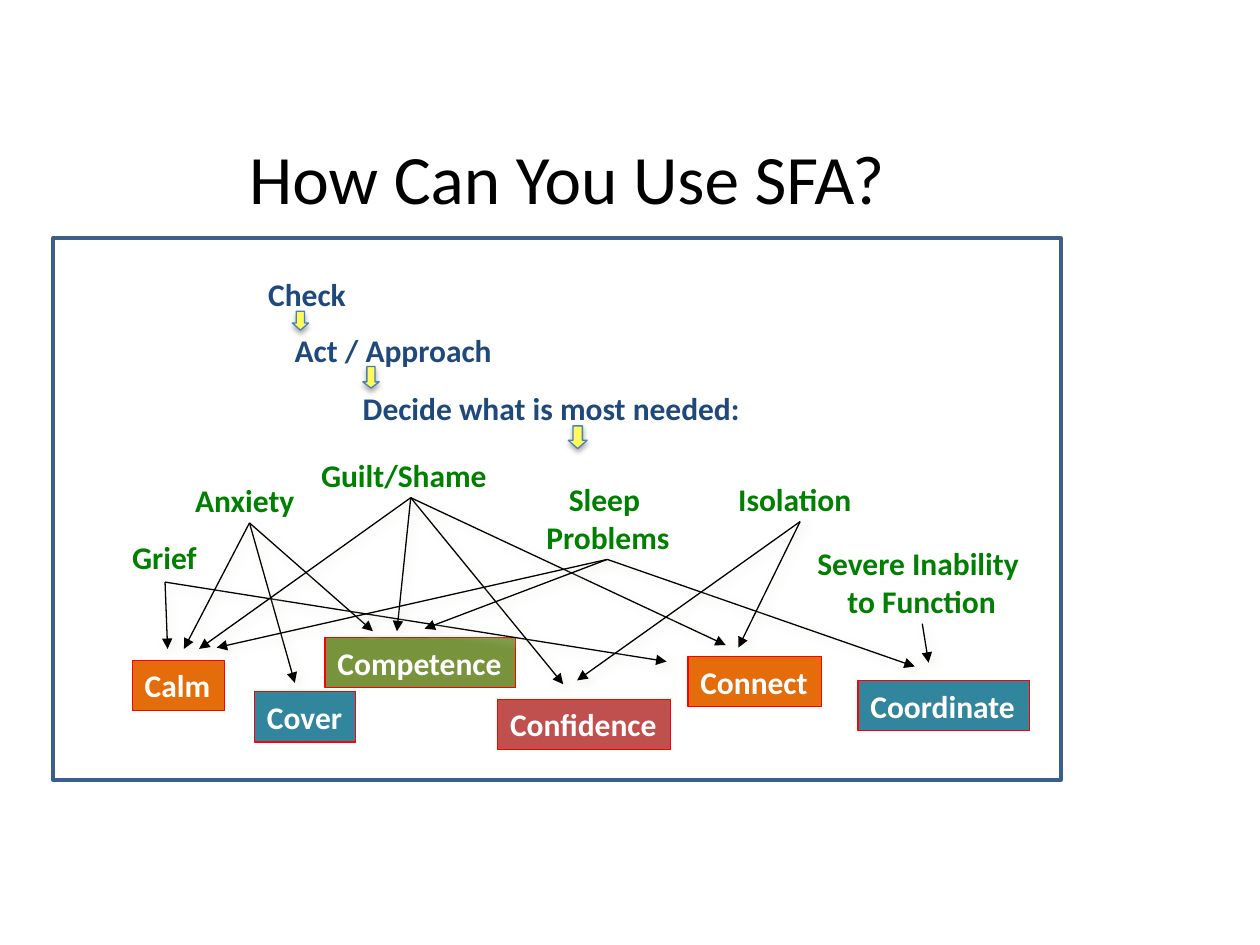
from lxml import etree
from pptx import Presentation
from pptx.dml.color import RGBColor
from pptx.enum.shapes import MSO_CONNECTOR, MSO_SHAPE
from pptx.enum.text import MSO_ANCHOR, MSO_AUTO_SIZE, PP_ALIGN
from pptx.oxml.ns import qn
from pptx.util import Inches, Pt

RECT = MSO_SHAPE.RECTANGLE
DOWN_ARROW = MSO_SHAPE.DOWN_ARROW
STRAIGHT = MSO_CONNECTOR.STRAIGHT
LEFT, CENTER = PP_ALIGN.LEFT, PP_ALIGN.CENTER
TOP = MSO_ANCHOR.TOP
GROW = MSO_AUTO_SIZE.SHAPE_TO_FIT_TEXT

COLORS = {
    "black": "000000", "white": "FFFFFF", "frame": "3A5F8C", "step": "1F497D",
    "problem": "008000", "border": "FF0000", "orange": "E46C0A", "olive": "77933C",
    "teal": "31859C", "red": "C0504D", "yellow": "FDFA59", "arrow_edge": "4B7EBC",
    "glow": "EEECE1",
}
LINE_HEIGHT = 0.4
ARROW_SHADOW = {"color": "black", "alpha": 35, "blur": 3.1, "dist": 1.8, "angle": 90}
LINK_SHADOW = {"color": "glow", "alpha": 75, "blur": 5, "dist": 3, "angle": 45}

STEPS = [
    ("Check", 2.03, 2.13, 0.82),
    ("Act / Approach", 2.24, 2.58, 1.78),
    ("Decide what is most needed:", 2.78, 3.04, 3.61),
]
STEP_ARROWS = [
    (2.32, 2.47, 0.13, 0.15, 0.438),
    (2.88, 2.91, 0.13, 0.17, 0.375),
    (4.51, 3.38, 0.15, 0.18, 0.438),
]
PROBLEMS = [
    (["Grief"], 0.95, 4.22, 0.72, (1.31, 4.62), [(1.33, 5.15), (5.29, 5.25)]),
    (["Anxiety"], 1.45, 3.77, 1, (1.98, 4.15),
     [(1.46, 5.15), (2.34, 5.42), (2.96, 5.01)]),
    (["Guilt/Shame"], 2.45, 3.57, 1.53, (3.26, 3.95),
     [(1.58, 5.15), (3.15, 5.01), (4.47, 5.43), (5.76, 5.12)]),
    (["Sleep ", "Problems"], 4.23, 3.76, 1.19, (4.82, 4.44),
     [(1.72, 5.14), (3.37, 4.99), (7.26, 5.29)]),
    (["Isolation"], 5.76, 3.76, 1.11, (6.35, 4.14), [(4.58, 5.4), (5.86, 5.14)]),
    (["Severe Inability ", "to Function"], 6.38, 4.27, 1.87, (7.32, 4.95),
     [(7.37, 5.26)]),
]
ACTIONS = [
    ("Calm", 1.05, 5.24, 0.73, "orange"),
    ("Cover", 2.02, 5.49, 0.8, "teal"),
    ("Competence", 2.58, 5.06, 1.51, "olive"),
    ("Confidence", 3.95, 5.55, 1.37, "red"),
    ("Connect", 5.46, 5.21, 1.06, "orange"),
    ("Coordinate", 6.81, 5.4, 1.36, "teal"),
]


def rgb(name):
    return RGBColor.from_string(COLORS[name])


def box(x, y, w, h):
    return [Inches(v) for v in (x, y, w, h)]


def format_font(font, color, **values):
    for key, value in {"name": "Calibri", **values}.items():
        setattr(font, key, value)
    font.color.rgb = rgb(color)


def write_lines(sp, lines, color):
    tf = sp.text_frame
    for key, value in {"word_wrap": False, "auto_size": GROW,
                       "vertical_anchor": TOP}.items():
        setattr(tf, key, value)
    for i, line in enumerate(lines):
        p = tf.add_paragraph() if i else tf.paragraphs[0]
        p.alignment = CENTER if len(lines) > 1 else LEFT
        r = p.add_run()
        r.text = line
        format_font(r.font, color, size=Pt(18), bold=True)


def add_shadow(sp, color, alpha, blur, dist, angle):
    effects = etree.SubElement(sp._element.spPr, qn("a:effectLst"))
    shadow = etree.SubElement(
        effects, qn("a:outerShdw"), blurRad=str(Pt(blur)), dist=str(Pt(dist)),
        dir=str(angle * 60000), algn="ctr", rotWithShape="0")
    clr = etree.SubElement(shadow, qn("a:srgbClr"), val=COLORS[color])
    etree.SubElement(clr, qn("a:alpha"), val=str(alpha * 1000))


def add_title(s, text):
    sp = s.shapes.title
    sp.left, sp.top, sp.width, sp.height = box(1.02, 1.02, 6.96, 0.61)
    tf = sp.text_frame
    tf.text = text
    tf.vertical_anchor = TOP
    p = tf.paragraphs[0]
    p.alignment = CENTER
    format_font(p.runs[0].font, "black", size=Pt(39.6))


def add_panel(s, shape, bounds, fill, line, width=0.75):
    sp = s.shapes.add_shape(shape, *box(*bounds))
    sp.fill.solid()
    sp.fill.fore_color.rgb = rgb(fill)
    sp.line.color.rgb = rgb(line)
    sp.line.width = Pt(width)
    return sp


def add_flat_box(s, bounds, fill, line, width=0.75):
    sp = add_panel(s, RECT, bounds, fill, line, width)
    sp.shadow.inherit = False
    return sp


def add_label(s, lines, x, y, w, color):
    height = LINE_HEIGHT + 0.31 * (len(lines) - 1)
    sp = s.shapes.add_textbox(*box(x, y, w, height))
    write_lines(sp, lines, color)


def add_step_arrow(s, x, y, w, h, head):
    sp = add_panel(s, DOWN_ARROW, (x, y, w, h), "yellow", "arrow_edge")
    sp.adjustments[0] = 0.5
    sp.adjustments[1] = head
    add_shadow(sp, **ARROW_SHADOW)


def add_link(s, start, end):
    link = s.shapes.add_connector(STRAIGHT, *box(*start, *end))
    link.line.color.rgb = rgb("black")
    link.line.width = Pt(0.75)
    etree.SubElement(link.line._get_or_add_ln(), qn("a:tailEnd"), type="triangle")
    add_shadow(link, **LINK_SHADOW)


def main():
    prs = Presentation()
    prs.slide_width, prs.slide_height = Inches(10), Inches(7.5)
    s = prs.slides.add_slide(prs.slide_layouts[5])
    add_flat_box(s, (0.42, 1.89, 8, 4.3), "white", "frame", 2)
    add_title(s, "How Can You Use SFA?")
    for text, x, y, w in STEPS:
        add_label(s, [text], x, y, w, "step")
    for arrow in STEP_ARROWS:
        add_step_arrow(s, *arrow)
    for text, x, y, w, fill in ACTIONS:
        sp = add_flat_box(s, (x, y, w, LINE_HEIGHT), fill, "border")
        write_lines(sp, [text], "white")
    for lines, x, y, w, start, ends in PROBLEMS:
        add_label(s, lines, x, y, w, "problem")
        for end in ends:
            add_link(s, start, end)
    prs.save("out.pptx")


if __name__ == "__main__":
    main()
